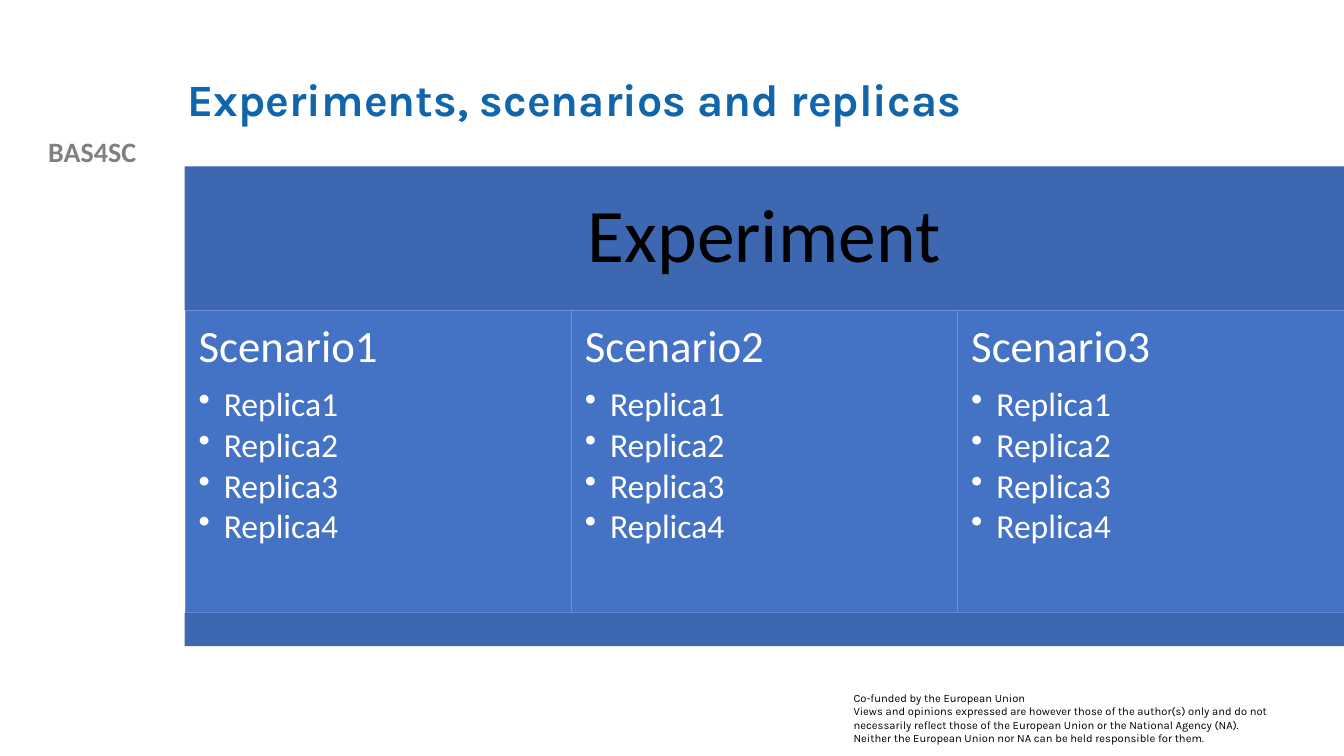
from dataclasses import dataclass

import lxml.etree
import pptx
import pptx.dml.color
import pptx.enum.shapes
import pptx.enum.text
import pptx.oxml.ns
import pptx.util

Pt = pptx.util.Pt
ALIGN = pptx.enum.text.PP_ALIGN
ANCHOR = pptx.enum.text.MSO_ANCHOR


@dataclass(frozen=True)
class Theme:
    body_font: str = "Calibri"
    brand_font: str = "Karla"
    title_blue: str = "1065AB"
    band_blue: str = "3E67B2"
    panel_blue: str = "4472C4"
    panel_line: str = "6C90D2"
    grey: str = "808080"
    black: str = "000000"
    white: str = "FFFFFF"
    experiment_size: float = 54
    heading_size: float = 32
    replica_size: float = 24
    project_size: float = 20
    notice_size: float = 8


THEME = Theme()
DIAGRAM_LEFT, DIAGRAM_WIDTH = 131.9, 828.1
BAND_TOP, BAND_HEIGHT = 118.8, 103
PANEL_TOP, PANEL_HEIGHT = 221.8, 216
PANEL_LEFT, PANEL_WIDTH = 132.3, 275.9
FOOT_HEIGHT = 23.8
SCENARIOS = ["Scenario1", "Scenario2", "Scenario3"]
REPLICAS = ["Replica1", "Replica2", "Replica3", "Replica4"]
NOTICE = [
    "Co-funded by the European Union",
    "Views and opinions expressed are however those of the author(s) only and do not "
    "necessarily reflect those of the European Union or the National Agency (NA).",
    "Neither the European Union nor NA can be held responsible for them.",
]


def rgb(colour):
    return pptx.dml.color.RGBColor.from_string(colour)


def apply(target, values):
    for name, value in values.items():
        setattr(target, name, value)


def set_frame(shape, inset_x=7.2, inset_y=3.6, anchor=ANCHOR.TOP):
    apply(shape.text_frame, {
        "word_wrap": True, "vertical_anchor": anchor,
        "margin_left": Pt(inset_x), "margin_right": Pt(inset_x),
        "margin_top": Pt(inset_y), "margin_bottom": Pt(inset_y),
    })


def add_bullet(para, indent):
    properties = para._p.get_or_add_pPr()
    properties.set("marL", str(Pt(indent)))
    properties.set("indent", str(-Pt(indent)))
    bullet = lxml.etree.SubElement(properties, pptx.oxml.ns.qn("a:buChar"))
    bullet.set("char", "•")


def write(shape, text, size, colour, font=THEME.body_font, bold=False,
          bullet=False, **layout):
    """Fill the first empty paragraph, or add one, with a single styled run."""
    frame = shape.text_frame
    para = frame.paragraphs[0] if not frame.text else frame.add_paragraph()
    if bullet:
        para.level = 1
        add_bullet(para, 18)
    apply(para, {"alignment": ALIGN.LEFT, **layout})
    span = para.add_run()
    span.text = text
    apply(span.font, {"name": font, "size": Pt(size), "bold": bold})
    span.font.color.rgb = rgb(colour)


def add_text_box(page, left, top, width, height, **frame):
    box = page.shapes.add_textbox(Pt(left), Pt(top), Pt(width), Pt(height))
    set_frame(box, **frame)
    return box


def add_block(page, left, top, width, height, fill, line=None):
    block = page.shapes.add_shape(
        pptx.enum.shapes.MSO_SHAPE.RECTANGLE,
        Pt(left), Pt(top), Pt(width), Pt(height))
    block.shadow.inherit = False
    block.fill.solid()
    block.fill.fore_color.rgb = rgb(fill)
    if line:
        block.line.color.rgb = rgb(line)
        block.line.width = Pt(0.5)
    else:
        block.line.fill.background()
    return block


def add_scenario(page, index, name):
    panel = add_block(page, PANEL_LEFT + index * PANEL_WIDTH, PANEL_TOP,
                      PANEL_WIDTH, PANEL_HEIGHT, THEME.panel_blue, THEME.panel_line)
    set_frame(panel, 9.6, 9.6)
    write(panel, name, THEME.heading_size, THEME.white,
          line_spacing=0.9, space_after=Pt(11))
    for replica in REPLICAS:
        write(panel, replica, THEME.replica_size, THEME.white, bullet=True,
              line_spacing=0.9, space_after=Pt(3.1))


def add_diagram(page):
    band = add_block(page, DIAGRAM_LEFT, BAND_TOP, DIAGRAM_WIDTH, BAND_HEIGHT,
                     THEME.band_blue)
    set_frame(band, 16.2, 16.2, ANCHOR.MIDDLE)
    write(band, "Experiment", THEME.experiment_size, THEME.black,
          alignment=ALIGN.CENTER, line_spacing=0.9)
    for index, name in enumerate(SCENARIOS):
        add_scenario(page, index, name)
    add_block(page, DIAGRAM_LEFT, PANEL_TOP + PANEL_HEIGHT, DIAGRAM_WIDTH,
              FOOT_HEIGHT, THEME.band_blue)


def main():
    deck = pptx.Presentation()
    apply(deck, {"slide_width": Pt(960), "slide_height": Pt(540)})
    page = deck.slides.add_slide(deck.slide_layouts[6])

    project = add_text_box(page, 0, 92.2, 131.8, 31)
    write(project, "BAS4SC", THEME.project_size, THEME.grey, bold=True,
          alignment=ALIGN.CENTER)
    notice = add_text_box(page, 602.6, 490.3, 318.2, 46)
    for line in NOTICE:
        write(notice, line, THEME.notice_size, THEME.black, THEME.brand_font)
    title = add_text_box(page, 126.7, 28.8, 767.5, 87.8, anchor=ANCHOR.MIDDLE)
    write(title, "Experiments, scenarios and replicas", THEME.heading_size,
          THEME.title_blue, THEME.brand_font, bold=True, line_spacing=0.9)
    add_diagram(page)
    deck.save("out.pptx")


if __name__ == "__main__":
    main()
